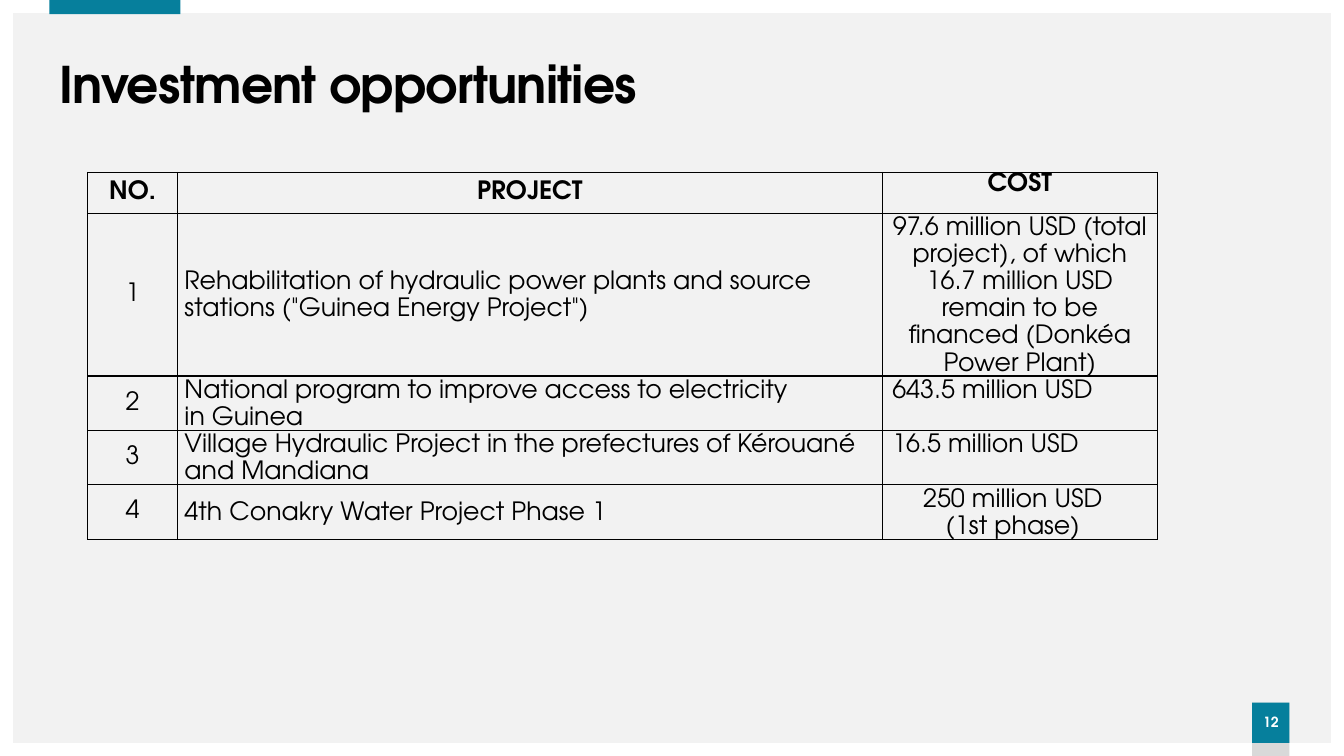
from dataclasses import dataclass

from lxml.etree import SubElement
from pptx import Presentation
from pptx.dml.color import RGBColor
from pptx.enum.shapes import MSO_SHAPE as Shape
from pptx.enum.text import MSO_ANCHOR as Anchor, PP_ALIGN as Align
from pptx.oxml.ns import qn
from pptx.util import Inches, Pt

# Content
TITLE = "Investment opportunities"
PAGE_NUMBER = "12"
HEADERS = ["NO.", "PROJECT", "COST"]
# Each project and cost is a list of paragraphs; "\n" is a line break
PROJECTS = [
    (['Rehabilitation of hydraulic power plants and source stations ("Guinea Energy Project")'],
     ["97.6 million USD (total project), of which 16.7 million USD "
      "remain to be financed (Donkéa Power Plant)"]),
    (["National program to improve access to electricity\nin Guinea"], ["643.5 million USD"]),
    (["Village Hydraulic Project in the prefectures of Kérouané and Mandiana"],
     ["16.5 million USD"]),
    (["4th Conakry Water Project Phase 1"], ["250 million USD", "(1st phase)"]),
]
TOP_LEFT_COSTS = (2, 3)
COLUMN_WIDTHS = [0.89, 6.99, 2.73]
ROW_HEIGHTS = [0.41, 1.61, 0.54, 0.54, 0.54]


@dataclass
class Theme:
    font: str = "TeX Gyre Adventor"
    background: str = "F2F2F2"
    white: str = "FFFFFF"
    black: str = "000000"
    teal: str = "067F9C"
    grey: str = "D9D9D9"
    title_size: int = 36
    table_size: int = 18
    number_size: int = 10
    table_pitch: float = 19.3
    border: float = 1


theme = Theme()


def add_block(page, kind, left, top, width, height, color):
    block = page.shapes.add_shape(kind, Inches(left), Inches(top), Inches(width), Inches(height))
    block.shadow.inherit = False
    block.fill.solid()
    block.fill.fore_color.rgb = RGBColor.from_string(color)
    block.line.fill.background()
    return block


def write(frame, paragraphs, size, color, bold=False, align=Align.LEFT, spacing=1.0):
    frame.word_wrap = True
    for index, text in enumerate(paragraphs):
        para = frame.paragraphs[0] if index == 0 else frame.add_paragraph()
        para.alignment = align
        para.line_spacing = spacing
        for number, line in enumerate(text.split("\n")):
            if number:
                para.add_line_break()
            span = para.add_run()
            span.text = line
            span.font.name = theme.font
            span.font.size = Pt(size)
            span.font.bold = bold
            span.font.color.rgb = RGBColor.from_string(color)


def set_borders(cell):
    properties = cell._tc.get_or_add_tcPr()
    for side in ("a:lnL", "a:lnR", "a:lnT", "a:lnB"):
        line = SubElement(properties, qn(side), w=str(Pt(theme.border)))
        SubElement(SubElement(line, qn("a:solidFill")), qn("a:srgbClr"), val=theme.black)


def fill_cell(cell, paragraphs, inset, anchor=Anchor.MIDDLE, **style):
    set_borders(cell)
    cell.fill.background()
    cell.margin_left = cell.margin_right = Inches(inset)
    cell.margin_top = cell.margin_bottom = 0
    cell.vertical_anchor = anchor
    write(cell.text_frame, paragraphs, theme.table_size, theme.black, **style)


def add_decoration(page):
    frame = add_block(page, Shape.FRAME, 0, 0, 13.33, 7.5, theme.white)
    frame.adjustments[0] = 0.017
    add_block(page, Shape.RECTANGLE, 0.49, 0, 1.3, 0.14, theme.teal)
    add_block(page, Shape.RECTANGLE, 12.42, 6.97, 0.37, 0.53, theme.grey)
    badge = add_block(page, Shape.RECTANGLE, 12.42, 6.97, 0.37, 0.4, theme.teal)
    badge.text_frame.margin_left = badge.text_frame.margin_right = 0
    badge.text_frame.vertical_anchor = Anchor.MIDDLE
    write(badge.text_frame, [PAGE_NUMBER], theme.number_size, theme.white,
          bold=True, align=Align.CENTER, spacing=0.9)


def add_title(page):
    box = page.shapes.add_textbox(Inches(0.49), Inches(0.54), Inches(12.22), Inches(0.65))
    box.text_frame.vertical_anchor = Anchor.MIDDLE
    write(box.text_frame, [TITLE], theme.title_size, theme.black, bold=True, spacing=0.9)
    span = box.text_frame.paragraphs[0].runs[0]
    span.font._element.set("spc", "-60")


def add_project_table(page):
    table = page.shapes.add_table(
        len(ROW_HEIGHTS), len(COLUMN_WIDTHS), Inches(0.87), Inches(1.71),
        Inches(sum(COLUMN_WIDTHS)), Inches(sum(ROW_HEIGHTS))).table
    table.first_row = table.horz_banding = False
    for column, width in zip(table.columns, COLUMN_WIDTHS):
        column.width = Inches(width)
    for row, height in zip(table.rows, ROW_HEIGHTS):
        row.height = Inches(height)

    # Header row
    for column, header in enumerate(HEADERS):
        anchor = Anchor.TOP if header == "COST" else Anchor.MIDDLE
        fill_cell(table.cell(0, column), [header], 0.06, anchor, bold=True, align=Align.CENTER)

    # Project rows
    pitch = Pt(theme.table_pitch)
    for number, (project, cost) in enumerate(PROJECTS, start=1):
        fill_cell(table.cell(number, 0), [str(number)], 0.06, align=Align.CENTER)
        fill_cell(table.cell(number, 1), project, 0.07, spacing=pitch)
        cost_cell = table.cell(number, 2)
        if number in TOP_LEFT_COSTS:
            fill_cell(cost_cell, cost, 0.1, Anchor.TOP, spacing=pitch)
        else:
            fill_cell(cost_cell, cost, 0.07, align=Align.CENTER, spacing=pitch)

    # The amount in the last row sits a little left of centre
    amount = cost_cell.text_frame.paragraphs[0]
    amount._p.get_or_add_pPr().set("marR", str(Inches(0.14)))


def main():
    deck = Presentation()
    deck.slide_width, deck.slide_height = Inches(13.33), Inches(7.5)
    page = deck.slides.add_slide(deck.slide_layouts[6])
    page.background.fill.solid()
    page.background.fill.fore_color.rgb = RGBColor.from_string(theme.background)
    add_decoration(page)
    add_title(page)
    add_project_table(page)
    deck.save("out.pptx")


if __name__ == "__main__":
    main()
